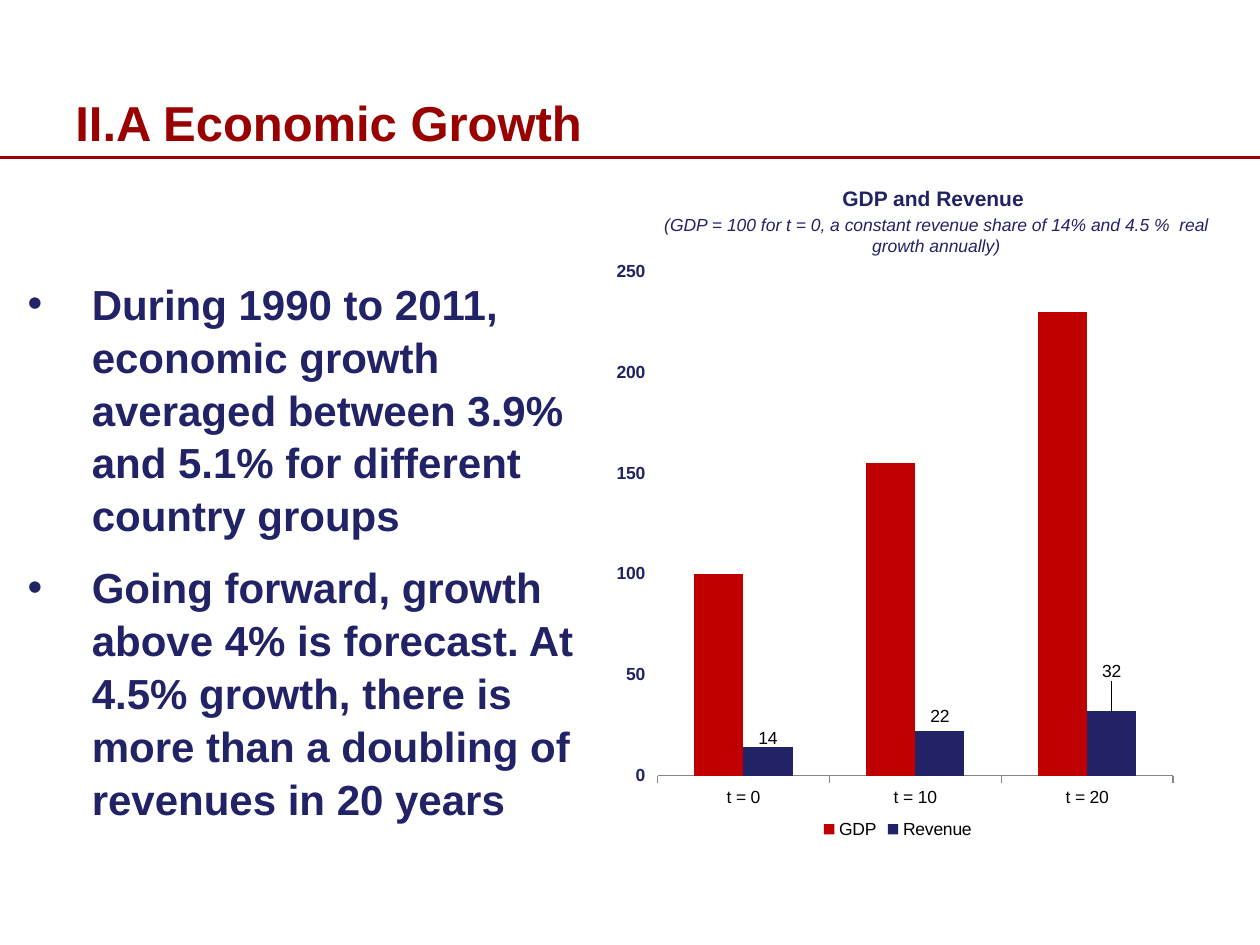
import dataclasses

import lxml.etree
import pptx
import pptx.chart.data
import pptx.dml.color
import pptx.enum.chart
import pptx.enum.shapes
import pptx.enum.text
import pptx.oxml.ns
import pptx.util

Inches = pptx.util.Inches
Pt = pptx.util.Pt
qn = pptx.oxml.ns.qn


@dataclasses.dataclass(frozen=True)
class Theme:
    font: str = "Arial"
    title_color: str = "990000"
    navy: str = "222267"
    red: str = "C00000"
    white: str = "FFFFFF"
    black: str = "000000"
    axis: str = "868686"
    title_size: int = 28
    body_size: int = 24
    caption_size: int = 12
    small_size: int = 10


def color(value):
    return pptx.dml.color.RGBColor.from_string(value)


def format_font(font, name, size, rgb, bold=False, italic=False):
    font.name = name
    font.size = Pt(size)
    font.bold = bold
    font.italic = italic
    font.color.rgb = color(rgb)


def add_text(paragraph, text, *, theme, size, rgb, bold=False, italic=False,
             align=None, before=0, after=0, spacing=None, bullet_indent=None):
    paragraph.alignment = align
    paragraph.space_before = Pt(before)
    paragraph.space_after = Pt(after)
    paragraph.line_spacing = spacing
    if bullet_indent is not None:
        properties = paragraph._p.get_or_add_pPr()
        properties.set("marL", str(Inches(bullet_indent)))
        properties.set("indent", str(-Inches(bullet_indent)))
        lxml.etree.SubElement(properties, qn("a:buFont"), typeface=theme.font)
        lxml.etree.SubElement(properties, qn("a:buChar"), char="•")
    run = paragraph.add_run()
    run.text = text
    format_font(run.font, theme.font, size, rgb, bold, italic)


def set_layout(parent, index, **values):
    for old in parent.findall(qn("c:layout")):
        parent.remove(old)
    layout = lxml.etree.Element(qn("c:layout"))
    manual = lxml.etree.SubElement(layout, qn("c:manualLayout"))
    for name, value in values.items():
        lxml.etree.SubElement(manual, qn("c:" + name), val=str(value))
    parent.insert(index, layout)


class SlideBuilder:
    def __init__(self, slide, theme):
        self.slide = slide
        self.theme = theme

    def rule(self, start, end, width):
        connector = self.slide.shapes.add_connector(
            pptx.enum.shapes.MSO_CONNECTOR.STRAIGHT,
            *map(Inches, start + end))
        connector.line.color.rgb = color(self.theme.title_color)
        connector.line.width = Pt(width)
        lxml.etree.SubElement(connector._element.spPr, qn("a:effectLst"))

    def text(self, box, paragraphs, anchor=pptx.enum.text.MSO_ANCHOR.TOP, fill=None):
        if fill is None:
            shape = self.slide.shapes.add_textbox(*map(Inches, box))
        else:
            shape = self.slide.shapes.add_shape(
                pptx.enum.shapes.MSO_SHAPE.RECTANGLE, *map(Inches, box))
            shape.shadow.inherit = False
            shape.fill.solid()
            shape.fill.fore_color.rgb = color(fill)
            shape.line.fill.background()
        frame = shape.text_frame
        frame.word_wrap = True
        frame.vertical_anchor = anchor
        for number, (text, options) in enumerate(paragraphs):
            paragraph = frame.add_paragraph() if number else frame.paragraphs[0]
            add_text(paragraph, text, theme=self.theme, **options)

    def column_chart(self, box, categories, series_values, colors):
        theme = self.theme
        data = pptx.chart.data.CategoryChartData(number_format="0")
        data.categories = categories
        for name, values in series_values.items():
            data.add_series(name, values)
        chart = self.slide.shapes.add_chart(
            pptx.enum.chart.XL_CHART_TYPE.COLUMN_CLUSTERED,
            *map(Inches, box), data).chart
        format_font(chart.font, theme.font, theme.small_size, theme.black)
        chart.has_title = False
        chart.has_legend = True
        chart.legend.position = pptx.enum.chart.XL_LEGEND_POSITION.BOTTOM
        chart.legend.include_in_layout = False
        plot = chart.plots[0]
        plot.gap_width = 150
        plot.overlap = 0
        plot.vary_by_categories = False
        for series, fill in zip(plot.series, colors):
            series.format.fill.solid()
            series.format.fill.fore_color.rgb = color(fill)
        self.axes(chart)
        set_layout(chart._chartSpace.chart.plotArea, 0, layoutTarget="inner",
                   xMode="edge", yMode="edge", x=0.09, y=0.08, w=0.88, h=0.81)
        return chart

    def axes(self, chart):
        theme = self.theme
        category_axis = chart.category_axis
        category_axis.major_tick_mark = pptx.enum.chart.XL_TICK_MARK.OUTSIDE
        category_axis.format.line.color.rgb = color(theme.axis)
        category_axis.format.line.width = Pt(0.75)
        value_axis = chart.value_axis
        value_axis.minimum_scale = 0
        value_axis.maximum_scale = 250
        value_axis.major_unit = 50
        value_axis.has_major_gridlines = False
        value_axis.major_tick_mark = pptx.enum.chart.XL_TICK_MARK.OUTSIDE
        value_axis.format.line.fill.background()
        format_font(value_axis.tick_labels.font, theme.font, theme.small_size,
                    theme.navy, bold=True)

    def value_labels(self, series, shifts):
        theme = self.theme
        position = pptx.enum.chart.XL_LABEL_POSITION.OUTSIDE_END
        labels = series.data_labels
        labels.show_value = True
        labels.number_format = "0"
        labels.number_format_is_linked = False
        labels.position = position
        format_font(labels.font, theme.font, theme.small_size, theme.black)
        for point in shifts:
            label = series.points[point].data_label
            format_font(label.font, theme.font, theme.small_size, theme.black)
            label.position = position
        for element in labels._element.findall(qn("c:dLbl")):
            point = int(element.find(qn("c:idx")).get("val"))
            set_layout(element, 1, x=0, y=shifts[point])


def main():
    theme = Theme()
    presentation = pptx.Presentation()
    presentation.slide_width = Inches(10)
    presentation.slide_height = Inches(7.5)
    slide = presentation.slides.add_slide(presentation.slide_layouts[6])
    builder = SlideBuilder(slide, theme)

    builder.rule((0, 1.25), (10, 1.25), 2.25)
    title = dict(size=theme.title_size, rgb=theme.title_color, bold=True)
    builder.text((0.5, 0.08, 8.17, 1.17), [("II.A Economic Growth", title)],
                 anchor=pptx.enum.text.MSO_ANCHOR.BOTTOM)

    body = dict(size=theme.body_size, rgb=theme.navy, bold=True, after=6,
                spacing=1.05, bullet_indent=0.51)
    builder.text((0.12, 2.14, 4.81, 4.93), [
        ("During 1990 to 2011, economic growth averaged between 3.9% and 5.1% "
         "for different country groups", body),
        ("Going forward, growth above 4% is forecast. At 4.5% growth, there is "
         "more than a doubling of revenues in 20 years", dict(body, before=4.8)),
    ])

    chart = builder.column_chart(
        (4.8, 1.76, 4.65, 4.94), ["t = 0", "t = 10", "t = 20"],
        {"GDP": (100, 155, 230), "Revenue": (14, 22, 32)},
        (theme.red, theme.navy))
    builder.value_labels(chart.plots[0].series[1], {0: 0.01, 2: -0.04})

    caption = dict(rgb=theme.navy, align=pptx.enum.text.PP_ALIGN.CENTER)
    builder.text((5.08, 1.42, 4.7, 0.67), [
        ("GDP and Revenue ", dict(caption, size=theme.caption_size, bold=True)),
        ("(GDP = 100 for t = 0, a constant revenue share of 14% and 4.5 %  real "
         "growth annually)",
         dict(caption, size=theme.small_size, italic=True, before=2)),
    ], fill=theme.white)

    presentation.save("out.pptx")


if __name__ == "__main__":
    main()
